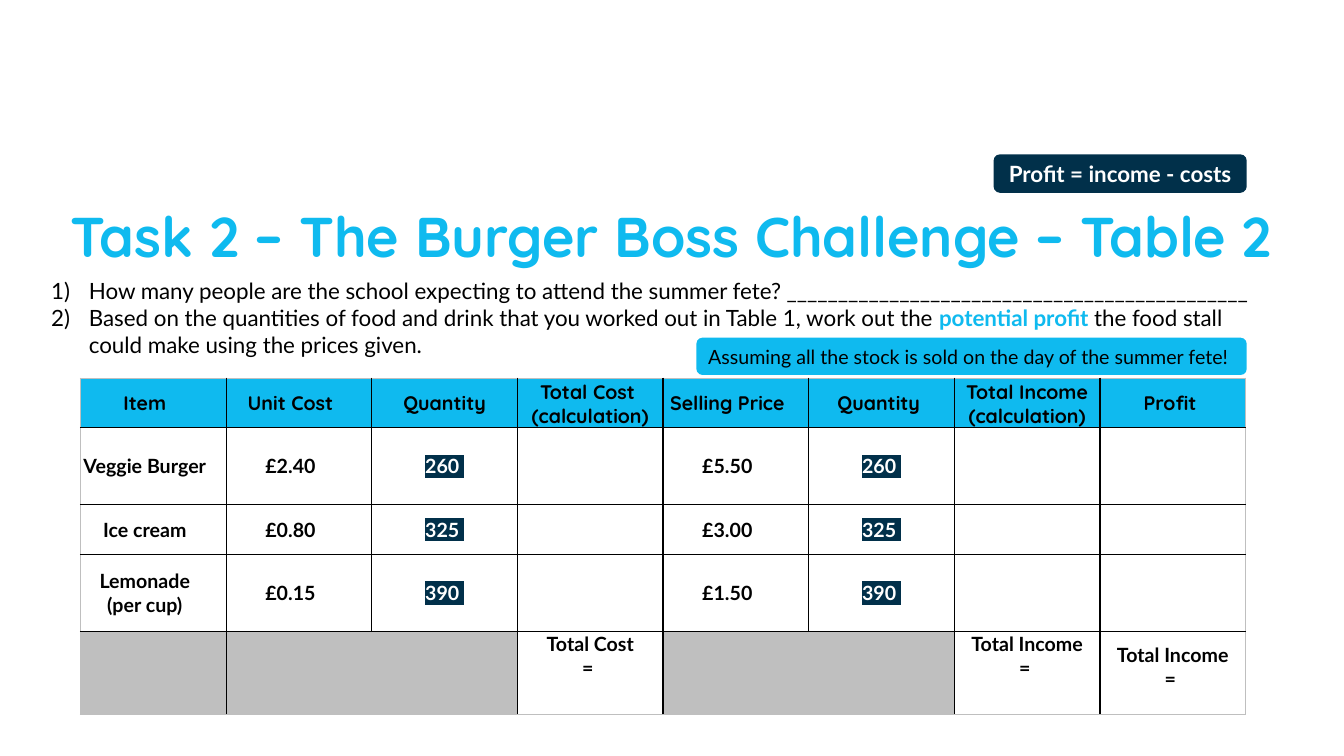
from lxml import etree
from pptx import Presentation
from pptx.dml.color import RGBColor
from pptx.enum import shapes, text
from pptx.oxml import ns
from pptx.util import Cm, Pt

BLUE = RGBColor(0x0F, 0xBA, 0xEF)
NAVY = RGBColor(0x01, 0x30, 0x4A)
GREY = RGBColor(0xBF, 0xBF, 0xBF)
BLACK = RGBColor(0, 0, 0)
WHITE = RGBColor(255, 255, 255)
CENTER, LEFT = text.PP_ALIGN.CENTER, text.PP_ALIGN.LEFT
MIDDLE, TOP = text.MSO_ANCHOR.MIDDLE, text.MSO_ANCHOR.TOP


def write(para, words, size=14, font="Lato", color=BLACK, bold=True,
          align=CENTER, highlight=None):
    para.alignment = align
    span = para.add_run()
    span.text = words
    span.font.size, span.font.name, span.font.bold = Pt(size), font, bold
    span.font.color.rgb = color
    if highlight is not None:
        mark = etree.Element(ns.qn("a:highlight"))
        etree.SubElement(mark, ns.qn("a:srgbClr"), val=str(highlight))
        span.font._element.find(ns.qn("a:solidFill")).addnext(mark)


def draw_borders(cell, colors):
    """Colours are in the order left, right, top, bottom."""
    properties = cell._tc.get_or_add_tcPr()
    for place, (side, color) in enumerate(zip("LRTB", colors)):
        line = etree.Element(ns.qn(f"a:ln{side}"), w=str(Pt(1)))
        fill = etree.SubElement(line, ns.qn("a:solidFill"))
        etree.SubElement(fill, ns.qn("a:srgbClr"), val=str(color))
        properties.insert(place, line)


deck = Presentation()
deck.slide_width, deck.slide_height = Cm(33.87), Cm(19.05)
page = deck.slides.add_slide(deck.slide_layouts[5])

title = page.shapes.title
title.left, title.top, title.width, title.height = Cm(0.99), Cm(5.21), Cm(31.85), Cm(1.65)
title.text_frame.vertical_anchor = MIDDLE
title.text_frame.auto_size = text.MSO_AUTO_SIZE.NONE
title.text_frame.paragraphs[0].line_spacing = 0.9
write(title.text_frame.paragraphs[0], "Task 2 – The Burger Boss Challenge – Table 2",
      size=40, font="Quicksand", color=BLUE)

# Numbered questions
questions = [
    [("How many people are the school expecting to attend the summer fete? " + "_" * 45, False)],
    [("Based on the quantities of food and drink that you worked out in Table 1, work out the ", False),
     ("potential profit ", True),
     ("the food stall could make using the prices given.", False)],
]
box = page.shapes.add_textbox(Cm(1.04), Cm(6.86), Cm(31.24), Cm(2.31))
box.text_frame.word_wrap = True
for number, question in enumerate(questions):
    para = box.text_frame.add_paragraph() if number else box.text_frame.paragraphs[0]
    layout = para._p.get_or_add_pPr()
    layout.set("marL", str(Cm(0.95)))
    layout.set("indent", str(-Cm(0.95)))
    etree.SubElement(layout, ns.qn("a:buFont"), typeface="Lato")
    etree.SubElement(layout, ns.qn("a:buAutoNum"), type="arabicParenR")
    for words, key in question:
        write(para, words, size=16, color=BLUE if key else BLACK, bold=key, align=LEFT)

# Profit table
rows = [
    ["Item", "Unit Cost", "Quantity", "Total Cost \n(calculation)", "Selling Price",
     "Quantity ", "Total Income\n(calculation)", "Profit "],
    ["Veggie Burger", "£2.40", "260 ", "", "£5.50", "260 ", "", ""],
    ["Ice cream", "£0.80", "325 ", "", "£3.00", "325 ", "", ""],
    ["Lemonade (per cup)", "£0.15", "390 ", "", "£1.50", "390 ", "", ""],
    ["", "", "", "Total Cost\n= ", "", "", "Total Income\n= ", "Total Income\n= "],
]
heights = [1.25, 1.94, 1.25, 1.94, 2.09]
last_row, last_column = len(rows) - 1, len(rows[0]) - 1
quantity_columns, price_columns = (2, 5), (0, 1, 4)
table = page.shapes.add_table(len(rows), len(rows[0]), Cm(2.03), Cm(9.53),
                              Cm(29.39), Cm(sum(heights))).table
for column in table.columns:
    column.width = Cm(3.67)
for r, (row, height) in enumerate(zip(rows, heights)):
    table.rows[r].height = Cm(height)
    for c, words in enumerate(row):
        cell = table.cell(r, c)
        cell.fill.solid()
        grey = r == last_row and not words
        cell.fill.fore_color.rgb = BLUE if r == 0 else GREY if grey else WHITE
        draw_borders(cell, [GREY if c == 0 else BLACK, GREY if c == last_column else BLACK,
                            GREY if r == 0 else BLACK, GREY if r == last_row else BLACK])
        cell.vertical_anchor = TOP if r == last_row else MIDDLE
        if not words:
            continue
        padded = c in price_columns or c == last_column
        cell.margin_left = Cm(0 if padded else 0.03)
        cell.margin_right = Cm(0.43 if c in price_columns else 0 if padded else 0.03)
        cell.margin_top = cell.margin_bottom = Cm((0.2 if r == 0 else 0.3) if padded else 0.03)
        stocked = c in quantity_columns and r > 0
        for number, line in enumerate(words.split("\n")):
            para = cell.text_frame.add_paragraph() if number else cell.text_frame.paragraphs[0]
            write(para, line, font="Lato" if r else "Quicksand",
                  color=WHITE if stocked else BLACK, highlight=NAVY if stocked else None)
for first in (1, 4):
    table.cell(last_row, first).merge(table.cell(last_row, first + 1))

# Labels
labels = [
    ("Assuming all the stock is sold on the day of the summer fete!",
     (17.55, 8.51, 13.87, 0.94), BLUE, TOP, False,
     dict(bold=False, align=LEFT)),
    ("Profit = income - costs",
     (25.04, 3.89, 6.38, 0.97), NAVY, MIDDLE, True,
     dict(size=16, color=WHITE)),
]
for words, place, fill, anchor, wrap, style in labels:
    label = page.shapes.add_shape(shapes.MSO_SHAPE.ROUNDED_RECTANGLE, *map(Cm, place))
    label.shadow.inherit = False
    label.fill.solid()
    label.fill.fore_color.rgb = fill
    label.line.fill.background()
    label.text_frame.word_wrap = wrap
    label.text_frame.vertical_anchor = anchor
    write(label.text_frame.paragraphs[0], words, **style)

deck.save("out.pptx")
